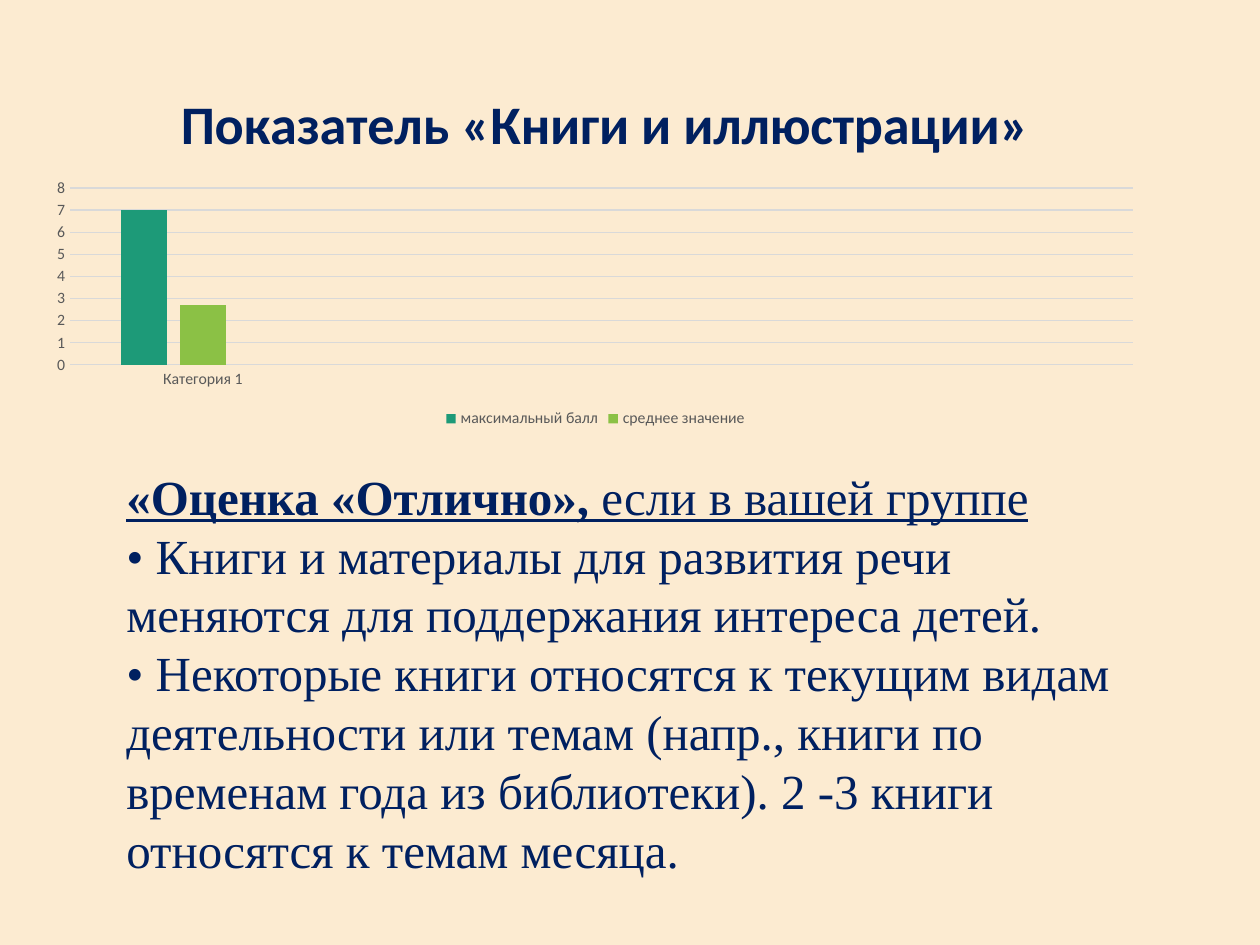
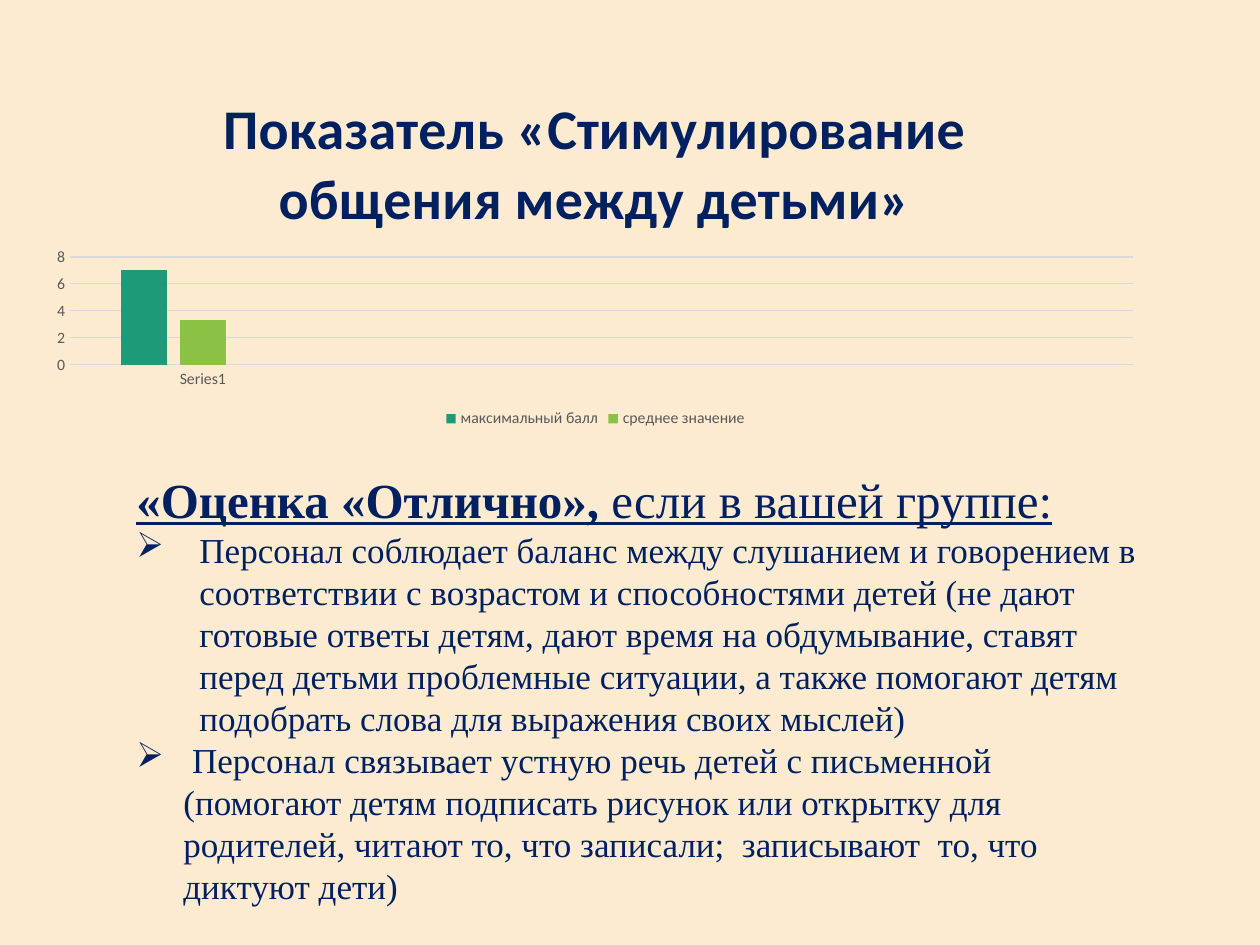
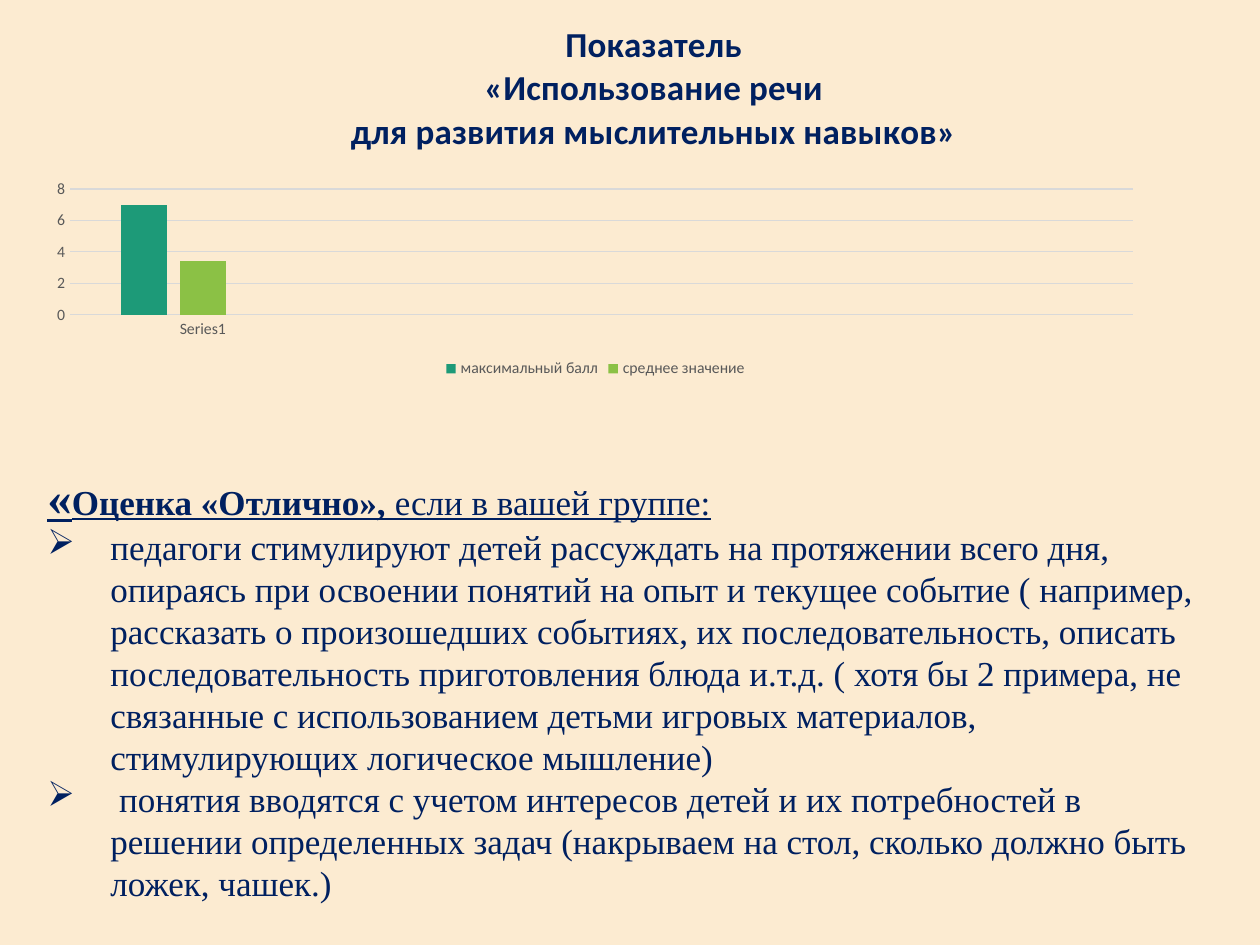
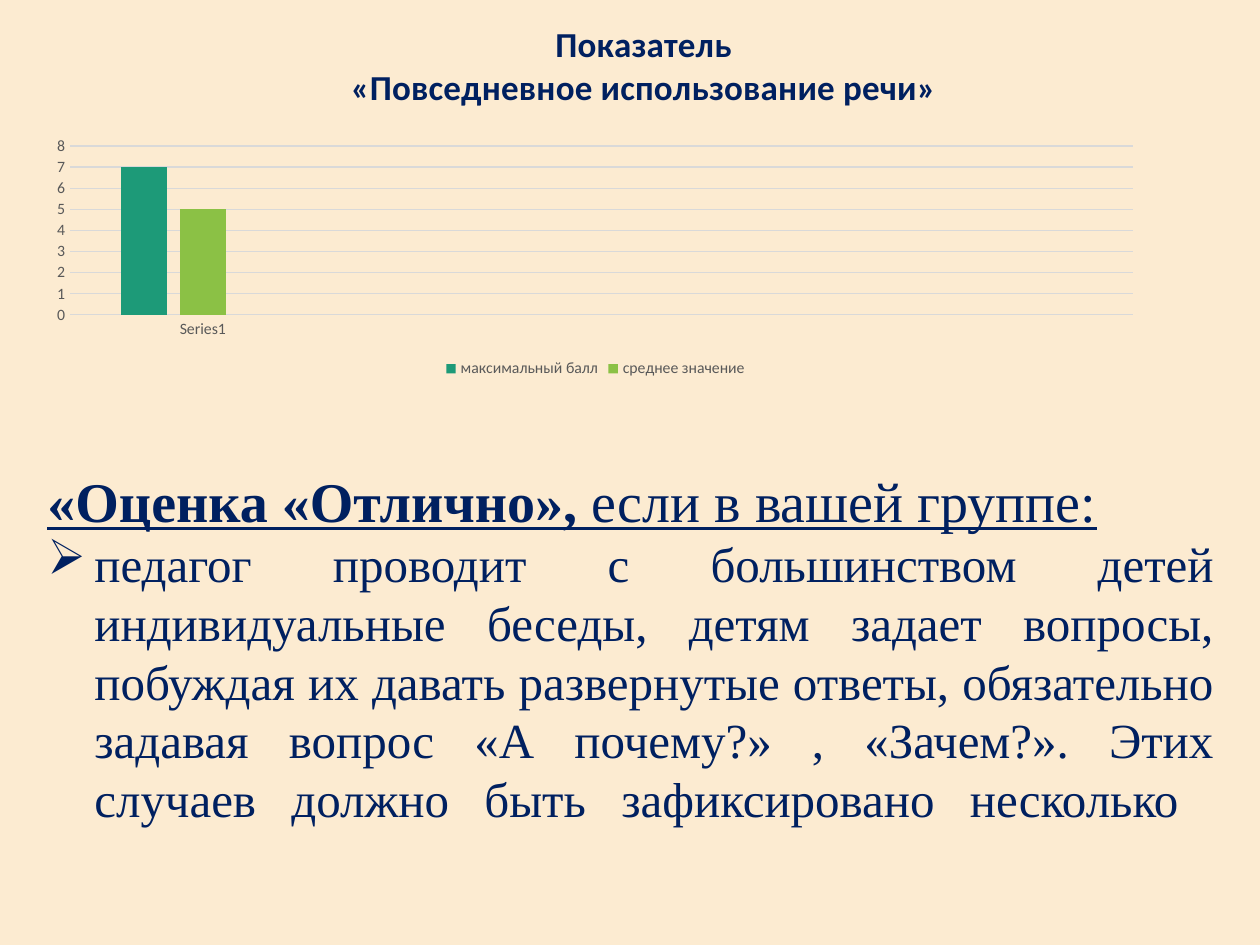
from dataclasses import dataclass

from lxml.etree import SubElement
from pptx import Presentation
from pptx.chart.data import CategoryChartData
from pptx.dml.color import RGBColor
from pptx.enum.chart import XL_CHART_TYPE, XL_LEGEND_POSITION, XL_TICK_MARK
from pptx.enum.text import MSO_AUTO_SIZE, PP_ALIGN
from pptx.oxml import parse_xml
from pptx.oxml.ns import nsdecls, qn
from pptx.util import Emu, Pt

CREAM = RGBColor(0xFC, 0xEB, 0xD1)
NAVY = RGBColor(0x00, 0x20, 0x60)
BLACK = RGBColor(0x00, 0x00, 0x00)
LABEL_GRAY = RGBColor(0x59, 0x59, 0x59)
GRID_GRAY = RGBColor(0xD9, 0xD9, 0xD9)
GREEN = RGBColor(0x1D, 0x9A, 0x78)
LIME = RGBColor(0x8B, 0xC1, 0x45)
SKY = RGBColor(0x36, 0xAF, 0xCE)

CHART_FONT = "Calibri"
BODY_FONT = "Times New Roman"
EMU_PER_PX = 914400 / 126
MAX_SCORE = 7
PLOT_LEFT, PLOT_WIDTH = 35, 1063

LOW_CHART = (35, 76, 1121, 357)
HIGH_CHART = (35, 16, 1121, 367)


@dataclass
class Piece:
    text: str
    size: int
    bold: bool = False
    underline: bool = False


@dataclass
class Line:
    pieces: list
    indent: int = 0
    bullet: bool = False
    justified: bool = False


@dataclass
class Indicator:
    """One slide: the chart with its title, and the criteria below it."""
    title: list
    title_size: int
    title_at: tuple
    chart_box: tuple
    plot_top: int
    plot_height: int
    category: str
    average: float
    step: int
    criteria_box: tuple
    criteria: list


def px(length):
    return Emu(round(length * EMU_PER_PX))


def heading(size, ending):
    return Line([Piece("«Оценка «Отлично», ", size, True, True),
                 Piece("если в вашей группе" + ending, size, underline=True)])


def arrow_item(text, size, indent, justified=False):
    return Line([Piece(text, size)], indent, True, justified)


def style_font(font, name, size, color, bold=False):
    font.name = name
    font.size = Pt(size)
    font.color.rgb = color
    font.bold = bold


def place_in_chart(element, index, box, **lengths):
    """Fix a chart part by px lengths inside the chart box."""
    for old in element.findall(qn("c:layout")):
        element.remove(old)
    layout = parse_xml(f"<c:layout {nsdecls('c')}><c:manualLayout/></c:layout>")
    manual = layout[0]
    if "w" in lengths:
        SubElement(manual, qn("c:layoutTarget")).set("val", "inner")
    for key in "xy":
        SubElement(manual, qn(f"c:{key}Mode")).set("val", "edge")
    for key, length in lengths.items():
        whole = box[2] if key in "xw" else box[3]
        SubElement(manual, qn(f"c:{key}")).set("val", f"{length / whole:.4f}")
    element.insert(index, layout)


def add_title(chart, indicator):
    chart.has_title = True
    frame = chart.chart_title.text_frame
    for number, text in enumerate(indicator.title):
        paragraph = frame.add_paragraph() if number else frame.paragraphs[0]
        paragraph.alignment = PP_ALIGN.CENTER
        run = paragraph.add_run()
        run.text = text
        style_font(run.font, CHART_FONT, indicator.title_size, NAVY, True)
    x, y = indicator.title_at
    place_in_chart(chart.chart_title._element, 1, indicator.chart_box, x=x, y=y)


def style_axes(chart, step):
    for axis in (chart.category_axis, chart.value_axis):
        axis.major_tick_mark = axis.minor_tick_mark = XL_TICK_MARK.NONE
        style_font(axis.tick_labels.font, CHART_FONT, 9, LABEL_GRAY)
    scores = chart.value_axis
    scores.minimum_scale, scores.maximum_scale, scores.major_unit = 0, 8, step
    scores.format.line.fill.background()
    for line in (chart.category_axis.format.line, scores.major_gridlines.format.line):
        line.color.rgb = GRID_GRAY
        line.width = Pt(0.75)


def add_legend(chart):
    """Legend at the bottom, without an entry for the empty third series."""
    chart.has_legend = True
    legend = chart.legend
    legend.position = XL_LEGEND_POSITION.BOTTOM
    legend.include_in_layout = False
    style_font(legend.font, CHART_FONT, 9, LABEL_GRAY)
    legend._element.insert(1, parse_xml(
        f'<c:legendEntry {nsdecls("c")}><c:idx val="2"/><c:delete val="1"/></c:legendEntry>'))


def add_score_chart(slide, indicator):
    scores = CategoryChartData()
    scores.categories = [indicator.category, "", "", ""]
    for name, score in (("максимальный балл", MAX_SCORE),
                        ("среднее значение", indicator.average),
                        ("Series 3", None)):
        scores.add_series(name, [score, None, None, None])
    chart = slide.shapes.add_chart(XL_CHART_TYPE.COLUMN_CLUSTERED,
                                   *map(px, indicator.chart_box), scores).chart
    style_font(chart.font, CHART_FONT, 10, BLACK)
    add_title(chart, indicator)
    style_axes(chart, indicator.step)
    add_legend(chart)

    plot = chart.plots[0]
    plot.vary_by_categories = False
    plot.gap_width, plot.overlap = 219, -27
    for series, color in zip(plot.series, (GREEN, LIME, SKY)):
        series.format.fill.solid()
        series.format.fill.fore_color.rgb = color
    place_in_chart(chart._chartSpace.chart.plotArea, 0, indicator.chart_box,
                   x=PLOT_LEFT, y=indicator.plot_top,
                   w=PLOT_WIDTH, h=indicator.plot_height)


def add_arrow_bullet(paragraph, indent):
    properties = paragraph._p.get_or_add_pPr()
    properties.set("marL", str(px(indent)))
    properties.set("indent", str(-px(indent)))
    SubElement(properties, qn("a:buChar")).set("char", "➢")


def add_criteria(slide, box, lines):
    frame = slide.shapes.add_textbox(*map(px, box)).text_frame
    frame.word_wrap = True
    frame.auto_size = MSO_AUTO_SIZE.SHAPE_TO_FIT_TEXT
    for number, line in enumerate(lines):
        paragraph = frame.add_paragraph() if number else frame.paragraphs[0]
        if line.bullet:
            add_arrow_bullet(paragraph, line.indent)
        for piece in line.pieces:
            run = paragraph.add_run()
            run.text = piece.text
            style_font(run.font, BODY_FONT, piece.size, NAVY, piece.bold)
            run.font.underline = piece.underline
        if line.justified:
            paragraph.alignment = PP_ALIGN.JUSTIFY
            paragraph.add_line_break()  # stretches the last line too


INDICATORS = [
    Indicator(
        # One point below the next title, so that it stays on one line
        ["Показатель «Книги и иллюстрации»"], 31, (136, 1),
        LOW_CHART, 112, 177, "Категория 1", 2.7, 1,
        (114, 460, 1042, 488),
        [heading(28, ""),
         Line([Piece("• Книги и материалы для развития речи меняются для "
                     "поддержания интереса детей.", 28)]),
         Line([Piece("• Некоторые книги относятся к текущим видам деятельности "
                     "или темам (напр., книги по временам года из библиотеки). "
                     "2 -3 книги относятся к темам месяца.", 28)])]),
    Indicator(
        ["Показатель «Стимулирование общения между детьми»"], 32, (178, 3),
        LOW_CHART, 181, 108, "Series1", 3.3, 2,
        (124, 463, 1042, 471),
        [heading(28, ":"),
         arrow_item("Персонал соблюдает баланс между слушанием и говорением в "
                    "соответствии с возрастом и способностями детей (не дают "
                    "готовые ответы детям, дают время на обдумывание, ставят "
                    "перед детьми проблемные ситуации, а также помогают детям "
                    "подобрать слова для выражения своих мыслей)", 20, 63),
         arrow_item(" Персонал связывает устную речь детей с письменной "
                    "(помогают детям подписать рисунок или открытку для "
                    "родителей, читают то, что записали;  записывают  то, что "
                    "диктуют дети)", 20, 47)]),
    Indicator(
        ["Показатель", "«Использование речи", "для развития мыслительных навыков»"],
        20, (312, 1),
        HIGH_CHART, 173, 126, "Series1", 3.4, 2,
        (35, 460, 1191, 454),
        [Line([Piece("«", 28, True, True),
               Piece("Оценка «Отлично», ", 20, True, True),
               Piece("если в вашей группе:", 20, underline=True)]),
         arrow_item("педагоги стимулируют детей рассуждать на протяжении всего "
                    "дня, опираясь при освоении понятий на опыт и текущее "
                    "событие ( например, рассказать о произошедших событиях, их "
                    "последовательность, описать последовательность "
                    "приготовления блюда и.т.д. ( хотя бы 2 примера, не "
                    "связанные с использованием детьми игровых материалов, "
                    "стимулирующих логическое мышление)", 20, 63),
         arrow_item(" понятия вводятся с учетом интересов детей и их "
                    "потребностей в решении определенных задач (накрываем на "
                    "стол, сколько должно быть ложек, чашек.)", 20, 63)]),
    Indicator(
        ["Показатель", "«Повседневное использование речи»"], 20, (312, 1),
        HIGH_CHART, 130, 169, "Series1", 5, 1,
        (35, 460, 1191, 437),
        [heading(32, ":"),
         arrow_item("педагог проводит с большинством детей индивидуальные "
                    "беседы, детям задает вопросы, побуждая их давать "
                    "развернутые ответы, обязательно задавая вопрос "
                    "«А почему?» , «Зачем?». Этих случаев должно быть "
                    "зафиксировано несколько ", 28, 47, justified=True)]),
]


def main():
    deck = Presentation()
    deck.slide_width, deck.slide_height = px(1260), px(945)
    paper = deck.slide_master.background.fill
    paper.solid()
    paper.fore_color.rgb = CREAM
    for indicator in INDICATORS:
        slide = deck.slides.add_slide(deck.slide_layouts[6])
        add_score_chart(slide, indicator)
        add_criteria(slide, indicator.criteria_box, indicator.criteria)
    deck.save("out.pptx")


if __name__ == "__main__":
    main()
